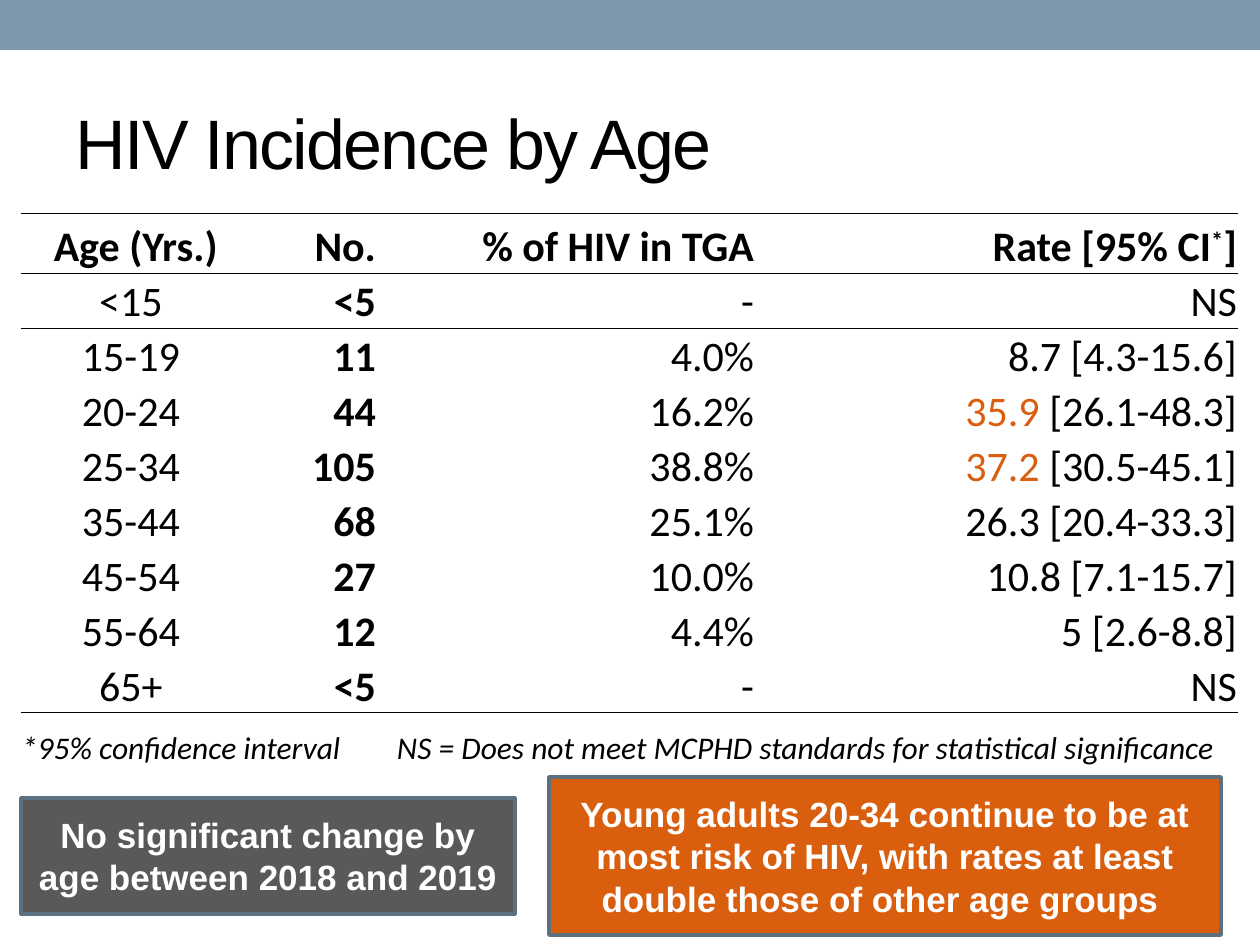
from lxml import etree
from pptx import Presentation
from pptx import util as u
from pptx.dml.color import RGBColor
from pptx.enum import shapes, text
from pptx.oxml import ns

PX = 914400 / 126
BLACK, WHITE, ORANGE = "000000", "FFFFFF", "D95F0E"
BAND, GREY, OUTLINE = "7E97AD", "595959", "5D7080"
LEFT, CENTER, RIGHT = text.PP_ALIGN.LEFT, text.PP_ALIGN.CENTER, text.PP_ALIGN.RIGHT
NO_STYLE = "{2D5ABB26-0587-4C30-8999-92F81FD0307C}"

COLUMNS = [(220, CENTER), (136, RIGHT), (378, RIGHT), (483, RIGHT)]
HEADER_HEIGHT, ROW_HEIGHT = 60, 55
HEADER = [" Age (Yrs.)", "No.", "% of HIV in TGA", ["Rate [95% CI", ("*", {"baseline": 30000}), "]"]]
AGES = [
    ["<15", "<5", "-", "NS"],
    ["15-19", "11", "4.0%", "8.7 [4.3-15.6]"],
    ["20-24", "44", "16.2%", [("35.9 ", {"color": ORANGE}), "[26.1-48.3]"]],
    ["25-34", "105", "38.8%", [("37.2 ", {"color": ORANGE}), "[30.5-45.1]"]],
    ["35-44", "68", "25.1%", "26.3 [20.4-33.3]"],
    ["45-54", "27", "10.0%", "10.8 [7.1-15.7]"],
    ["55-64", "12", "4.4%", " 5 [2.6-8.8]"],
    ["65+", "<5", "-", "NS"],
]
FOOTNOTE = "*95% confidence interval\tNS = Does not meet MCPHD standards for statistical significance"


def px(length):
    return u.Emu(round(length * PX))


def rgb(value):
    return RGBColor.from_string(value)


def write(frame, content, align=LEFT, **style):
    paragraph = frame.paragraphs[0]
    paragraph.alignment = align
    for part in [content] if isinstance(content, str) else content:
        words, changes = (part, {}) if isinstance(part, str) else part
        look = {"size": 24, "font": "Calibri", "color": BLACK, "bold": False,
                "italic": False, **style, **changes}
        run = paragraph.add_run()
        run.text = words
        run.font.size = u.Pt(look["size"])
        run.font.name = look["font"]
        run.font.color.rgb = rgb(look["color"])
        run.font.bold = look["bold"]
        run.font.italic = look["italic"]
        for attribute in ("baseline", "spc"):
            if attribute in look:
                run.font._element.set(attribute, str(look[attribute]))
    return paragraph


def add_rectangle(slide, box, fill, outline=None):
    rectangle = slide.shapes.add_shape(shapes.MSO_SHAPE.RECTANGLE, *map(px, box))
    rectangle.shadow.inherit = False
    rectangle.fill.solid()
    rectangle.fill.fore_color.rgb = rgb(fill)
    if outline:
        rectangle.line.color.rgb = rgb(outline)
        rectangle.line.width = u.Pt(2.08)
    else:
        rectangle.line.fill.background()
    return rectangle


def add_title(slide, box, words):
    title = slide.shapes.title
    title.left, title.top, title.width, title.height = map(px, box)
    title.text_frame.auto_size = text.MSO_AUTO_SIZE.NONE
    title.text_frame.vertical_anchor = text.MSO_ANCHOR.MIDDLE
    write(title.text_frame, words, size=40, font="Arial", spc=-100)


def add_callout(slide, box, fill, words):
    callout = add_rectangle(slide, box, fill, OUTLINE)
    callout.text_frame.word_wrap = True
    callout.text_frame.vertical_anchor = text.MSO_ANCHOR.MIDDLE
    write(callout.text_frame, words, CENTER, size=20, font="Arial", color=WHITE, bold=True)


def rule_cell(cell, edge, points):
    properties = cell._tc.get_or_add_tcPr()
    line = etree.Element(ns.qn(f"a:{edge}"), w=str(u.Pt(points)))
    fill = etree.SubElement(line, ns.qn("a:solidFill"))
    etree.SubElement(fill, ns.qn("a:srgbClr"), val=BLACK)
    properties.insert(0, line)


def prepare_cell(cell):
    cell.fill.background()
    cell.vertical_anchor = text.MSO_ANCHOR.BOTTOM
    cell.margin_left = cell.margin_right = cell.margin_top = px(1)
    cell.margin_bottom = 0


def add_tab_stop(paragraph, position):
    stops = etree.SubElement(paragraph._p.get_or_add_pPr(), ns.qn("a:tabLst"))
    etree.SubElement(stops, ns.qn("a:tab"), pos=str(px(position)), algn="l")


def add_incidence_table(slide, left, top):
    rows = [HEADER, *AGES]
    footer = len(rows)
    width = sum(column_width for column_width, _ in COLUMNS)
    height = HEADER_HEIGHT + footer * ROW_HEIGHT
    frame = slide.shapes.add_table(footer + 1, len(COLUMNS), *map(px, (left, top, width, height)))
    table = frame.table
    table.first_row = table.horz_banding = False
    table._tbl.tblPr.find(ns.qn("a:tableStyleId")).text = NO_STYLE
    for column, (column_width, _) in zip(table.columns, COLUMNS):
        column.width = px(column_width)
    for index, row in enumerate(table.rows):
        row.height = px(ROW_HEIGHT if index else HEADER_HEIGHT)
    for cell in table.iter_cells():
        prepare_cell(cell)

    for r, values in enumerate(rows):
        for c, (value, (_, align)) in enumerate(zip(values, COLUMNS)):
            write(table.cell(r, c).text_frame, value, align, bold=r == 0 or c == 1)
    for c in range(len(COLUMNS)):
        for r, edge, points in [(0, "lnB", 0.5), (0, "lnT", 0.5), (1, "lnT", 0.5),
                                (footer - 1, "lnB", 1), (footer, "lnT", 1)]:
            rule_cell(table.cell(r, c), edge, points)

    footnote = table.cell(footer, 0)
    footnote.merge(table.cell(footer, len(COLUMNS) - 1))
    add_tab_stop(write(footnote.text_frame, FOOTNOTE, size=18, italic=True), 375)


def main():
    deck = Presentation()
    deck.slide_width, deck.slide_height = px(1260), px(945)
    slide = deck.slides.add_slide(deck.slide_layouts[5])
    add_rectangle(slide, (0, 0, 1260, 50), BAND)
    add_incidence_table(slide, 21, 213)
    add_title(slide, (63, 73, 1134, 136), "HIV Incidence by Age")
    add_callout(slide, (21, 798, 494, 116), GREY,
                "No significant change by age between 2018 and 2019")
    add_callout(slide, (549, 777, 672, 158), ORANGE,
                "Young adults 20-34 continue to be at most risk of HIV, "
                "with rates at least double those of other age groups ")
    deck.save("out.pptx")


if __name__ == "__main__":
    main()
